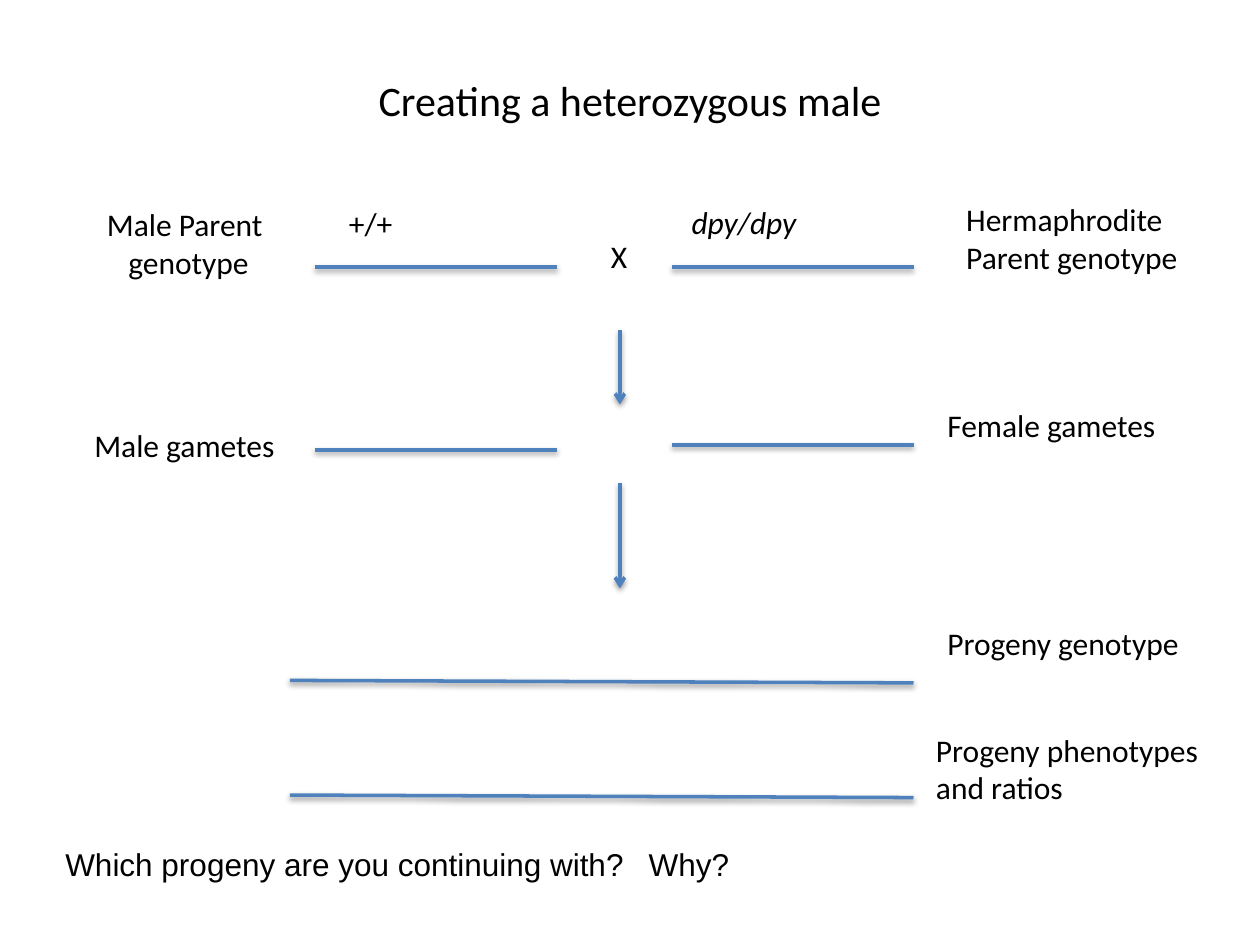
from collections import namedtuple
from dataclasses import dataclass

from lxml.etree import SubElement
from pptx import Presentation
from pptx.dml.color import RGBColor as Color
from pptx.enum.shapes import MSO_CONNECTOR as Connector
from pptx.enum.text import MSO_ANCHOR as Anchor, MSO_AUTO_SIZE as AutoSize, PP_ALIGN as Align
from pptx.oxml.ns import qn
from pptx.util import Inches, Pt


@dataclass(frozen=True)
class Theme:
    ink: Color = Color(0, 0, 0)
    rule: Color = Color(0x4F, 0x81, 0xBD)
    font: str = "Calibri"
    question_font: str = "Arial"
    title_size: Pt = Pt(24)
    text_size: Pt = Pt(18)
    rule_width: Pt = Pt(2)


THEME = Theme()
Box = namedtuple("Box", "left top width height")  # inches


def style_text(frame, size, font, italic=None):
    for para in frame.paragraphs:
        for span in para.runs:
            span.font.size = size
            span.font.name = font
            span.font.italic = italic
            span.font.color.rgb = THEME.ink


def add_label(page, area, x, y, width, text, font=THEME.font, italic=None):
    """Place a label at x, y within the area; its height follows its lines."""
    height = 0.1 + 0.3 * len(text.split("\n"))
    label = page.shapes.add_textbox(Inches(area.left + x), Inches(area.top + y),
                                    Inches(width), Inches(height))
    frame = label.text_frame
    frame.word_wrap = False
    frame.auto_size = AutoSize.SHAPE_TO_FIT_TEXT
    frame.text = text
    style_text(frame, THEME.text_size, font, italic)
    return frame


def add_rule(page, area, start, end, arrow=False):
    """Draw a softly shadowed line between two points of the area."""
    (x1, y1), (x2, y2) = start, end
    rule = page.shapes.add_connector(
        Connector.STRAIGHT,
        Inches(area.left + x1), Inches(area.top + y1),
        Inches(area.left + x2), Inches(area.top + y2))
    rule.line.color.rgb = THEME.rule
    rule.line.width = THEME.rule_width
    if arrow:
        SubElement(rule.line._get_or_add_ln(), qn("a:tailEnd"), type="arrow")
    effects = SubElement(rule._element.spPr, qn("a:effectLst"))
    shadow = SubElement(effects, qn("a:outerShdw"), blurRad=str(Pt(3.1)),
                        dist=str(Pt(1.6)), dir="5400000", rotWithShape="0")
    tone = SubElement(shadow, qn("a:srgbClr"), val="000000")
    SubElement(tone, qn("a:alpha"), val="38000")


def add_title(page, area):
    title = page.shapes.title
    title.left, title.top, title.width, title.height = map(Inches, area)
    frame = title.text_frame
    frame.text = "Creating a heterozygous male"
    frame.vertical_anchor = Anchor.MIDDLE
    frame.paragraphs[0].alignment = Align.CENTER
    style_text(frame, THEME.title_size, THEME.font)


def add_answer_pair(page, area, left_y, right_y):
    """Two answer lines of equal length, against the sides of the area."""
    length = 1.92
    add_rule(page, area, (0, left_y), (length, left_y))
    add_rule(page, area, (area.width - length, right_y), (area.width, right_y))


def add_down_arrow(page, area):
    middle = area.width / 2
    add_rule(page, area, (middle, 0), (middle, area.height), arrow=True)


def add_parents(page, area):
    male = add_label(page, area, -1.75, 0.02, 1.45, "Male Parent\ngenotype")
    male.paragraphs[1]._p.get_or_add_pPr().set("marL", str(Inches(0.17)))
    add_label(page, area, 0.17, 0.01, 0.55, "+/+")
    add_label(page, area, 2.25, 0.27, 0.33, "X")
    add_label(page, area, 2.89, 0, 1.1, "dpy/dpy", italic=True)
    add_label(page, area, 5.07, -0.02, 1.91, "Hermaphrodite\nParent genotype")
    add_answer_pair(page, area, area.height, area.height)


def add_gametes(page, area):
    add_label(page, area, -1.85, 0.16, 1.65, "Male gametes")
    add_label(page, area, 4.92, 0, 1.87, "Female gametes")
    add_answer_pair(page, area, area.height, area.height - 0.04)


def add_progeny(page, area, x, text, width):
    """A full-width answer line, sloping slightly, with its label."""
    add_label(page, area, x, 0, width, text)
    add_rule(page, area, (0, area.height - 0.02), (area.width, area.height))


def add_question(page, area):
    text = "Which progeny are you continuing with?\tWhy?"
    frame = add_label(page, area, 0, 0, area.width, text, THEME.question_font)
    stops = SubElement(frame.paragraphs[0]._p.get_or_add_pPr(), qn("a:tabLst"))
    SubElement(stops, qn("a:tab"), pos=str(Inches(4.63)), algn="l")


def main():
    deck = Presentation()
    deck.slide_width, deck.slide_height = Inches(10), Inches(7.5)
    page = deck.slides.add_slide(deck.slide_layouts[5])

    add_title(page, Box(0.75, 0.42, 8.5, 0.75))

    # Cross: parents, their gametes, and the arrows between steps
    add_parents(page, Box(2.5, 1.56, 4.75, 0.56))
    add_down_arrow(page, Box(4.75, 2.62, 0.34, 0.59))
    add_gametes(page, Box(2.5, 3.17, 4.75, 0.4))
    add_down_arrow(page, Box(4.75, 3.83, 0.34, 0.84))

    # Outcome of the cross
    add_progeny(page, Box(2.3, 4.9, 4.95, 0.52), 5.12, "Progeny genotype", 2.12)
    add_progeny(page, Box(2.3, 5.75, 4.95, 0.58), 5.03,
                "Progeny phenotypes\nand ratios", 2.31)
    add_question(page, Box(0.42, 6.66, 5.53, 0.4))

    deck.save("out.pptx")


if __name__ == "__main__":
    main()
